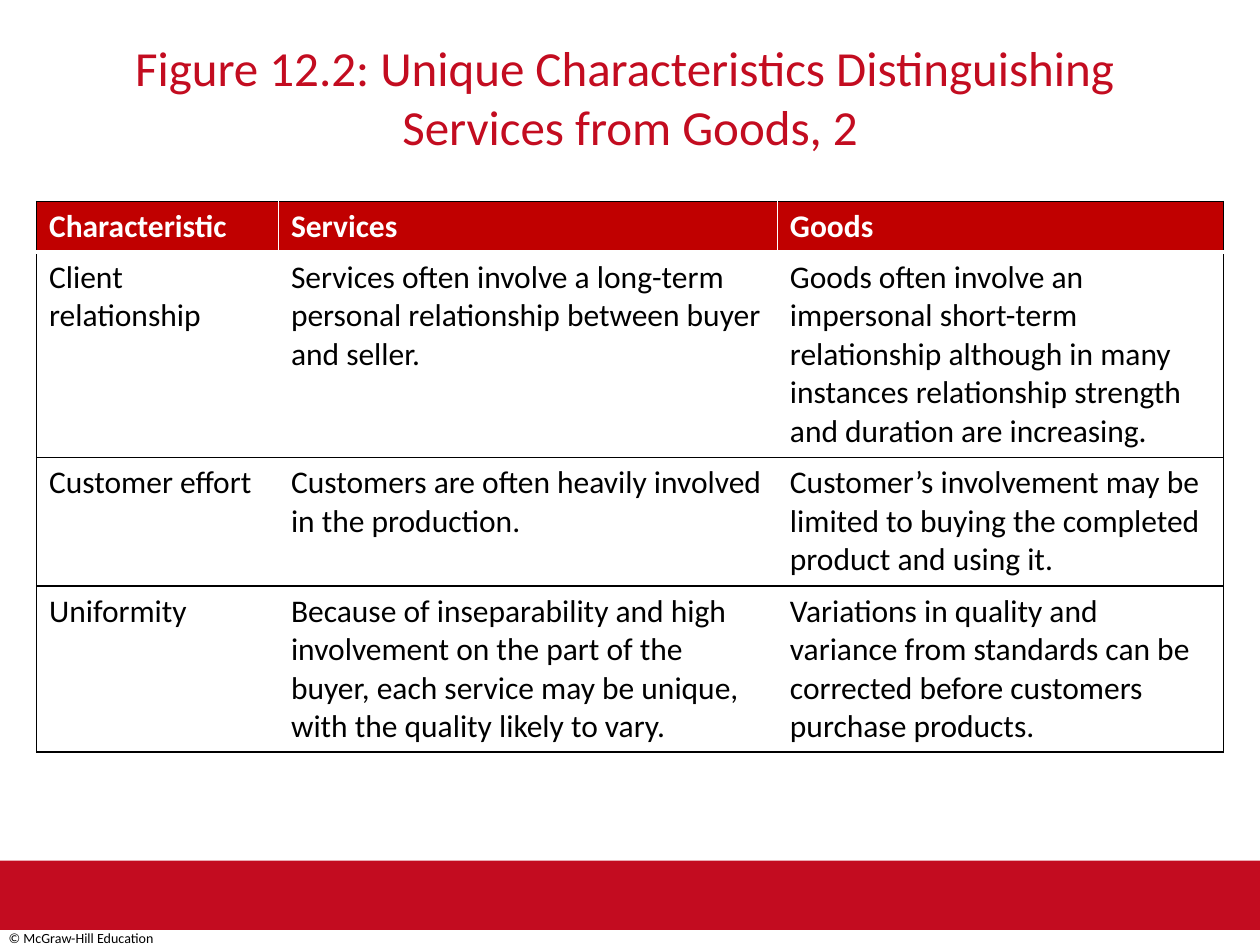
from lxml.etree import SubElement
from pptx import Presentation
from pptx.dml.color import RGBColor
from pptx.enum.shapes import MSO_SHAPE as Shape
from pptx.enum.text import MSO_ANCHOR as Anchor, MSO_AUTO_SIZE as AutoSize, PP_ALIGN as Align
from pptx.oxml.ns import qn
from pptx.util import Inches, Pt

BLACK, WHITE = "000000", "FFFFFF"
BRAND_RED, HEADER_RED = "C30C20", "C00000"

COLUMN_WIDTHS = [1.92, 3.96, 3.54]
ROW_HEIGHTS = [0.4, 1.63, 1.02, 1.32]
ROWS = [
    ["Characteristic", "Services", "Goods"],
    ["Client relationship",
     "Services often involve a long-term personal relationship between buyer and seller.",
     "Goods often involve an impersonal short-term relationship although in many instances "
     "relationship strength and duration are increasing."],
    ["Customer effort",
     "Customers are often heavily involved in the production.",
     "Customer’s involvement may be limited to buying the completed product and using it."],
    ["Uniformity",
     "Because of inseparability and high involvement on the part of the buyer, each service "
     "may be unique, with the quality likely to vary.",
     "Variations in quality and variance from standards can be corrected before customers "
     "purchase products."],
]


def color(hex_string):
    return RGBColor.from_string(hex_string)


def write(text_frame, text, size=18, fill=BLACK, bold=False, align=Align.LEFT, font="Calibri"):
    text_frame.text = text
    text_frame.word_wrap = True
    for paragraph in text_frame.paragraphs:
        paragraph.alignment = align
        for run in paragraph.runs:
            run.font.name = font
            run.font.size = Pt(size)
            run.font.bold = bold
            run.font.color.rgb = color(fill)


def set_border(cell, side, hex_string, width=1):
    properties = cell._tc.get_or_add_tcPr()
    line = SubElement(properties, qn(f"a:ln{side}"), w=str(Pt(width)))
    solid_fill = SubElement(line, qn("a:solidFill"))
    SubElement(solid_fill, qn("a:srgbClr"), val=hex_string)


class SlideBuilder:
    def __init__(self, presentation):
        self.slide = presentation.slides.add_slide(presentation.slide_layouts[5])

    def title(self, text, left, top, width, height):
        title = self.slide.shapes.title
        title.left, title.top = Inches(left), Inches(top)
        title.width, title.height = Inches(width), Inches(height)
        write(title.text_frame, text, size=28, fill=BRAND_RED, align=Align.CENTER)
        title.text_frame.auto_size = AutoSize.NONE
        title.text_frame.vertical_anchor = Anchor.TOP

    def band(self, left, top, width, height):
        shape = self.slide.shapes.add_shape(
            Shape.RECTANGLE, Inches(left), Inches(top), Inches(width), Inches(height))
        shape.shadow.inherit = False
        shape.fill.solid()
        shape.fill.fore_color.rgb = color(BRAND_RED)
        shape.line.fill.background()

    def label(self, text, left, top, width, height, **style):
        box = self.slide.shapes.add_textbox(
            Inches(left), Inches(top), Inches(width), Inches(height))
        write(box.text_frame, text, **style)

    def table(self, rows, left, top, widths, heights):
        table = self.slide.shapes.add_table(
            len(rows), len(widths), Inches(left), Inches(top),
            Inches(sum(widths)), Inches(sum(heights))).table
        table.horz_banding = False
        for column, width in zip(table.columns, widths):
            column.width = Inches(width)
        for row, height in zip(table.rows, heights):
            row.height = Inches(height)
        for row_index, texts in enumerate(rows):
            for column_index, text in enumerate(texts):
                self.cell(table.cell(row_index, column_index), text,
                          is_header=row_index == 0, below_header=row_index == 1,
                          is_first=column_index == 0,
                          is_last=column_index == len(widths) - 1)

    def cell(self, cell, text, is_header, below_header, is_first, is_last):
        write(cell.text_frame, text, fill=WHITE if is_header else BLACK, bold=is_header)
        # Black frame and row rules, white column rules, thick white rule under the header
        set_border(cell, "L", BLACK if is_first else WHITE)
        set_border(cell, "R", BLACK if is_last else WHITE)
        set_border(cell, "T", WHITE if below_header else BLACK, 3 if below_header else 1)
        set_border(cell, "B", WHITE if is_header else BLACK, 3 if is_header else 1)
        if is_header:
            cell.fill.solid()
            cell.fill.fore_color.rgb = color(HEADER_RED)
        else:
            cell.fill.background()


def main():
    presentation = Presentation()
    presentation.slide_width, presentation.slide_height = Inches(10), Inches(7.5)
    builder = SlideBuilder(presentation)

    # Footer band and copyright line
    builder.band(0, 6.83, 10, 0.55)
    builder.label("© McGraw-Hill Education", -0.03, 7.33, 5, 0.24, size=8)

    # Title
    builder.title("Figure 12.2: Unique Characteristics Distinguishing \vServices from Goods, 2",
                  0, 0.25, 10, 0.67)

    # Comparison table
    builder.table(ROWS, 0.29, 1.6, COLUMN_WIDTHS, ROW_HEIGHTS)

    presentation.save("out.pptx")


if __name__ == "__main__":
    main()
